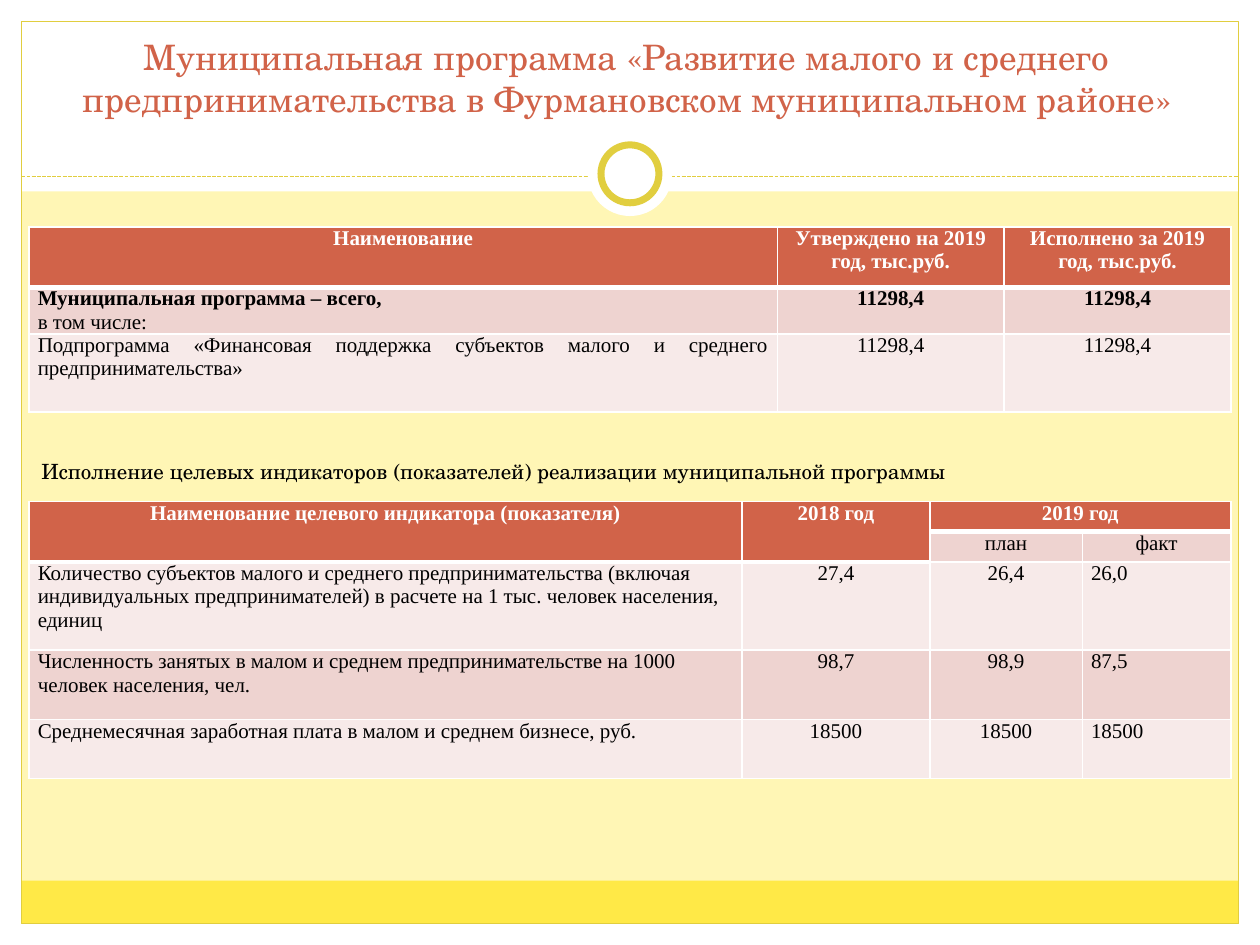
import pptx
import pptx.dml.color
import pptx.enum.dml
import pptx.enum.shapes
import pptx.enum.text
import pptx.oxml
import pptx.oxml.ns
import pptx.util
from lxml import etree
from pptx.util import Inches

SERIF = "Times New Roman"
SCHOOL = "TeX Gyre Schola"
WHITE, BLACK, BRICK, GOLD = "FFFFFF", "000000", "D16349", "E1CE3F"
BANDS = ["EED3D0", "F7EAE9"]
MSO = pptx.enum.shapes.MSO_SHAPE
ALIGN = {
    "l": pptx.enum.text.PP_ALIGN.LEFT,
    "c": pptx.enum.text.PP_ALIGN.CENTER,
    "j": pptx.enum.text.PP_ALIGN.JUSTIFY,
}


def rgb(color):
    return pptx.dml.color.RGBColor.from_string(color)


def write(tf, text, size=12, font=SERIF, color=BLACK, bold=False, align="l", new=False):
    p = tf.add_paragraph() if new else tf.paragraphs[0]
    p.alignment = ALIGN[align]
    r = p.add_run()
    r.text = text
    r.font.size = pptx.util.Pt(size)
    r.font.name = font
    r.font.bold = bold
    r.font.color.rgb = rgb(color)


def add_shape(s, kind, box, fill=None, line=None, width=0.75):
    sp = s.shapes.add_shape(kind, *map(Inches, box))
    sp.shadow.inherit = False
    if fill:
        sp.fill.solid()
        sp.fill.fore_color.rgb = rgb(fill)
    else:
        sp.fill.background()
    if line:
        sp.line.color.rgb = rgb(line)
        sp.line.width = pptx.util.Pt(width)
    else:
        sp.line.fill.background()


def add_circle(s, cx, cy, d, **look):
    add_shape(s, MSO.OVAL, (cx - d / 2, cy - d / 2, d, d), **look)


def add_frame(s, w, h):
    """White margins, footer band, outline and the ringed divider."""
    m, divider = 0.17, 1.4
    for box in [(0, h - m, w, m), (0, 0, w, 1.52), (0, 0, m, h), (w - m, 0, m, h)]:
        add_shape(s, MSO.RECTANGLE, box, fill=WHITE)
    add_shape(s, MSO.RECTANGLE, (m, 6.99, w - 2 * m, 0.34), fill="FFE947")
    add_shape(s, MSO.RECTANGLE, (m, m, w - 2 * m, h - 2 * m), line=GOLD)
    c = s.shapes.add_connector(
        pptx.enum.shapes.MSO_CONNECTOR.STRAIGHT,
        Inches(m), Inches(divider), Inches(w - m), Inches(divider))
    c.line.color.rgb = rgb(GOLD)
    c.line.width = pptx.util.Pt(0.75)
    c.line.dash_style = pptx.enum.dml.MSO_LINE.SQUARE_DOT
    etree.SubElement(c.element.spPr, pptx.oxml.ns.qn("a:effectLst"))
    add_circle(s, w / 2, 1.38, 0.67, fill=WHITE)
    add_circle(s, w / 2, 1.38, 0.46, fill=WHITE, line=GOLD, width=4)


def add_title(s, box, text):
    sp = s.shapes.title
    sp.element.getparent().append(sp.element)  # in front of the frame
    sp.left, sp.top, sp.width, sp.height = map(Inches, box)
    tf = sp.text_frame
    tf.word_wrap = True
    tf.auto_size = pptx.enum.text.MSO_AUTO_SIZE.NONE
    tf.vertical_anchor = pptx.enum.text.MSO_ANCHOR.BOTTOM
    write(tf, text, size=20, font=SCHOOL, color=BRICK, align="c")


def add_caption(s, box, text):
    tf = s.shapes.add_textbox(*map(Inches, box)).text_frame
    tf.word_wrap = True
    write(tf, text, font=SCHOOL)


def style_cell(cell, fill, bottom=1):
    cell.margin_left = cell.margin_right = Inches(0.07)
    cell.margin_top = cell.margin_bottom = 0
    tcPr = cell._tc.get_or_add_tcPr()
    for side, width in [("L", 1), ("R", 1), ("T", 1), ("B", bottom)]:
        tcPr.append(pptx.oxml.parse_xml(
            f'<a:ln{side} {pptx.oxml.ns.nsdecls("a")} w="{pptx.util.Pt(width)}">'
            f'<a:solidFill><a:srgbClr val="{WHITE}"/></a:solidFill></a:ln{side}>'))
    cell.fill.solid()
    cell.fill.fore_color.rgb = rgb(fill)


def add_table(s, box, cols, heights, rows, aligns, merges=(), bold_lines=()):
    """None marks a cell covered by a merge; a line break starts a paragraph."""
    t = s.shapes.add_table(len(rows), len(cols), *map(Inches, box)).table
    t.first_row = t.horz_banding = False
    for col, width in zip(t.columns, cols):
        col.width = Inches(width)
    for row, height in zip(t.rows, heights):
        row.height = Inches(height)
    for (r1, c1), (r2, c2) in merges:
        t.cell(r1, c1).merge(t.cell(r2, c2))
    for i, row in enumerate(rows):
        for j, text in enumerate(row):
            cell = t.cell(i, j)
            head = i == 0 or text is None
            style_cell(cell, BRICK if head else BANDS[(i - 1) % 2], 3 if head else 1)
            for n, line in enumerate((text or "").split("\n") if text else []):
                write(cell.text_frame, line, new=n > 0,
                      color=WHITE if head else BLACK,
                      bold=head or (i in bold_lines and n == 0),
                      align="c" if i < 1 + len(merges) // 3 else aligns[j])


def add_budget_table(s, box):
    amount = "11298,4"
    add_table(
        s, box, [5.94, 1.8, 1.8], [0.48, 0.32, 0.62],
        [["Наименование", "Утверждено на 2019 год, тыс.руб.", "Исполнено за 2019 год, тыс.руб."],
         ["Муниципальная программа – всего,\nв том числе:", amount, amount],
         ["Подпрограмма «Финансовая поддержка субъектов малого и среднего "
          "предпринимательства»", amount, amount]],
        "jcc", bold_lines=[1])


def add_indicator_table(s, box):
    add_table(
        s, box, [5.66, 1.49, 1.21, 1.18], [0.24, 0.24, 0.7, 0.55, 0.47],
        [["Наименование целевого индикатора (показателя)", "2018 год", "2019 год", None],
         [None, None, "план", "факт"],
         ["Количество субъектов малого и среднего предпринимательства (включая "
          "индивидуальных предпринимателей) в расчете на 1 тыс. человек населения, единиц",
          "27,4", "26,4", "26,0"],
         ["Численность занятых в малом и среднем предпринимательстве на 1000 "
          "человек населения, чел.", "98,7", "98,9", "87,5"],
         ["Среднемесячная заработная плата в малом и среднем бизнесе, руб.",
          "18500", "18500", "18500"]],
        "lccl", merges=[((0, 0), (1, 0)), ((0, 1), (1, 1)), ((0, 2), (0, 3))])


def main():
    w, h = 10, 7.5
    prs = pptx.Presentation()
    prs.slide_width, prs.slide_height = Inches(w), Inches(h)
    s = prs.slides.add_slide(prs.slide_layouts.get_by_name("Title Only"))
    s.background.fill.solid()
    s.background.fill.fore_color.rgb = rgb("FFF6B5")
    add_frame(s, w, h)
    add_title(s, (0.31, 0.47, 9.33, 0.53),
              "Муниципальная программа «Развитие малого и среднего "
              "предпринимательства в Фурмановском муниципальном районе»")
    add_budget_table(s, (0.23, 1.8, 9.53, 1.5))
    add_caption(s, (0.23, 3.59, 9.3, 0.39),
                "Исполнение целевых индикаторов (показателей) реализации "
                "муниципальной программы")
    add_indicator_table(s, (0.23, 3.98, 9.53, 2.19))
    prs.save("out.pptx")


if __name__ == "__main__":
    main()
